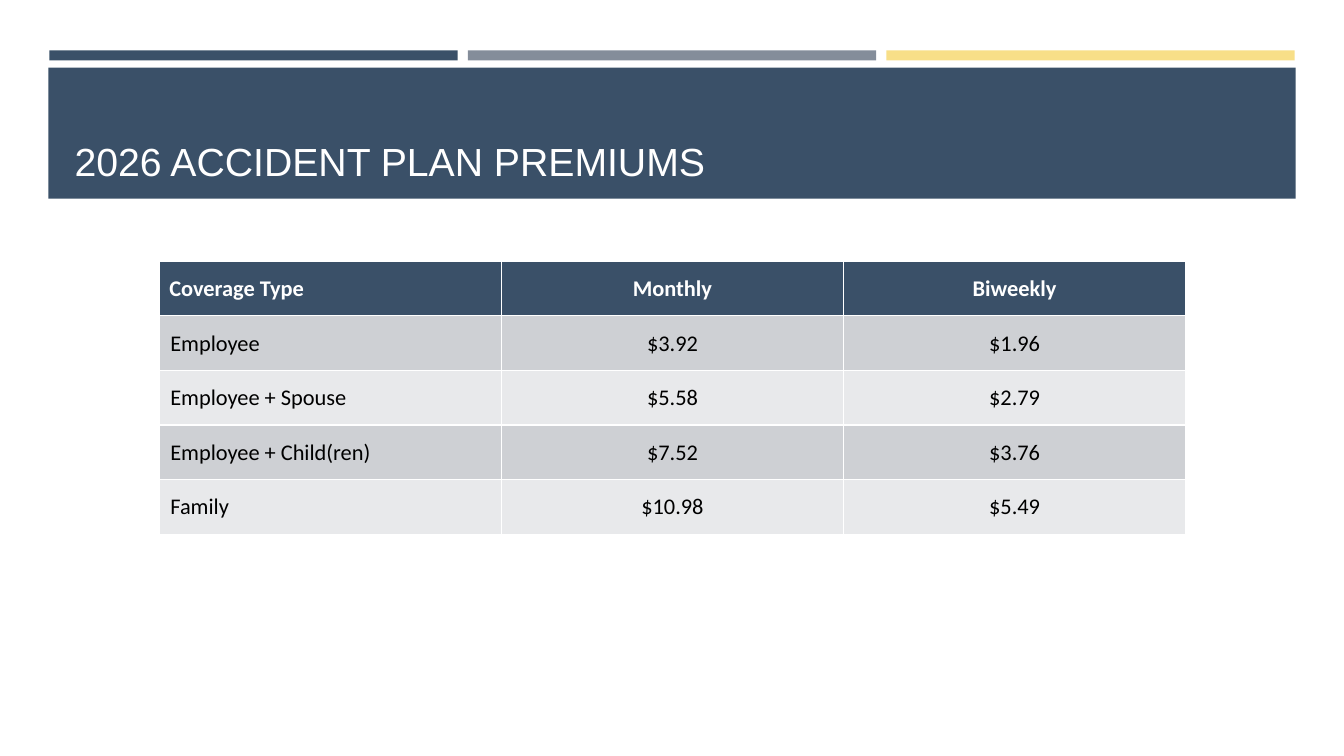
from pptx import Presentation
from pptx.dml.color import RGBColor
from pptx.enum.shapes import MSO_SHAPE
from pptx.enum.text import MSO_ANCHOR, MSO_AUTO_SIZE, PP_ALIGN
from pptx.util import Inches, Pt

NAVY, GRAY, YELLOW = "3A5068", "848D9A", "F8DF88"
WHITE, BLACK = "FFFFFF", "000000"
ROW_FILLS = ["CED0D4", "E8E9EB"]


def paint(fill, color):
    fill.solid()
    fill.fore_color.rgb = RGBColor.from_string(color)


def write(frame, text, size=16, font="Calibri", color=BLACK, bold=False, align=PP_ALIGN.LEFT):
    paragraph = frame.paragraphs[0]
    paragraph.alignment = align
    run = paragraph.add_run()
    run.text = text
    run.font.size = Pt(size)
    run.font.name = font
    run.font.bold = bold
    run.font.color.rgb = RGBColor.from_string(color)


presentation = Presentation()
presentation.slide_width = Inches(13.33)
presentation.slide_height = Inches(7.5)
slide = presentation.slides.add_slide(presentation.slide_layouts[5])

bars = [(0.49 + 4.15 * index, 0.5, 4.05, 0.1, color)
        for index, color in enumerate([NAVY, GRAY, YELLOW])]
title_band = (0.48, 0.67, 12.37, 1.3, NAVY)
for left, top, width, height, color in bars + [title_band]:
    shape = slide.shapes.add_shape(
        MSO_SHAPE.RECTANGLE, Inches(left), Inches(top), Inches(width), Inches(height))
    shape.shadow.inherit = False
    paint(shape.fill, color)
    shape.line.fill.background()

title = slide.shapes.title
title.left, title.top = Inches(0.64), Inches(0.77)
title.width, title.height = Inches(12.06), Inches(1.11)
title.text_frame.auto_size = MSO_AUTO_SIZE.NONE
title.text_frame.vertical_anchor = MSO_ANCHOR.BOTTOM
write(title.text_frame, "2026 ACCIDENT PLAN PREMIUMS", size=28, font="Arial", color=WHITE)
title.element.getparent().append(title.element)

premiums = [
    ("Coverage Type", "Monthly", "Biweekly"),
    ("Employee", "$3.92", "$1.96"),
    ("Employee + Spouse", "$5.58", "$2.79"),
    ("Employee + Child(ren)", "$7.52", "$3.76"),
    ("Family", "$10.98", "$5.49"),
]
table = slide.shapes.add_table(
    len(premiums), 3, Inches(1.58), Inches(2.59), Inches(10.18), Inches(2.71)).table
for row_index, row in enumerate(premiums):
    is_header = row_index == 0
    for column_index, text in enumerate(row):
        cell = table.cell(row_index, column_index)
        cell.vertical_anchor = MSO_ANCHOR.MIDDLE
        paint(cell.fill, NAVY if is_header else ROW_FILLS[(row_index - 1) % 2])
        if not is_header:
            cell.margin_left = Inches(0.11 if column_index == 0 else 0.01)
            cell.margin_top = cell.margin_right = Inches(0.01)
            cell.margin_bottom = 0
        write(cell.text_frame, text, bold=is_header,
              color=WHITE if is_header else BLACK,
              align=PP_ALIGN.LEFT if column_index == 0 else PP_ALIGN.CENTER)

presentation.save("out.pptx")
